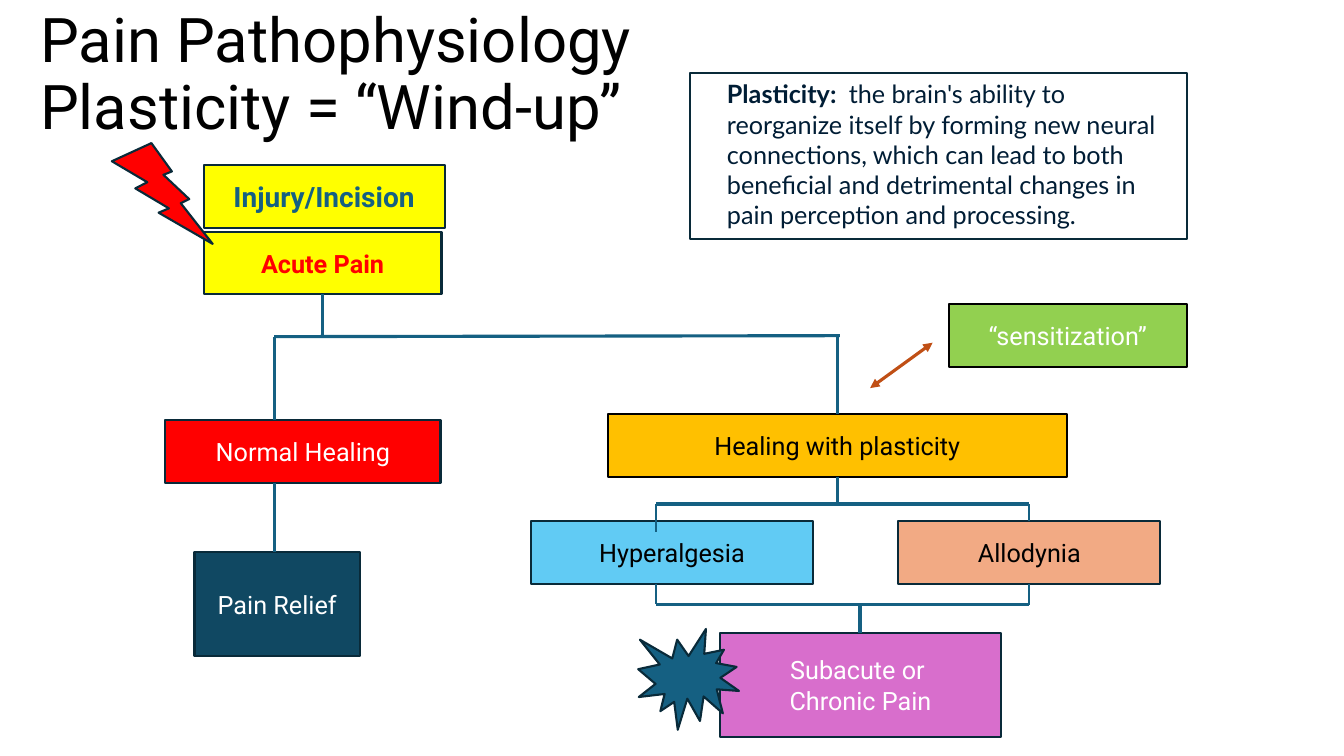
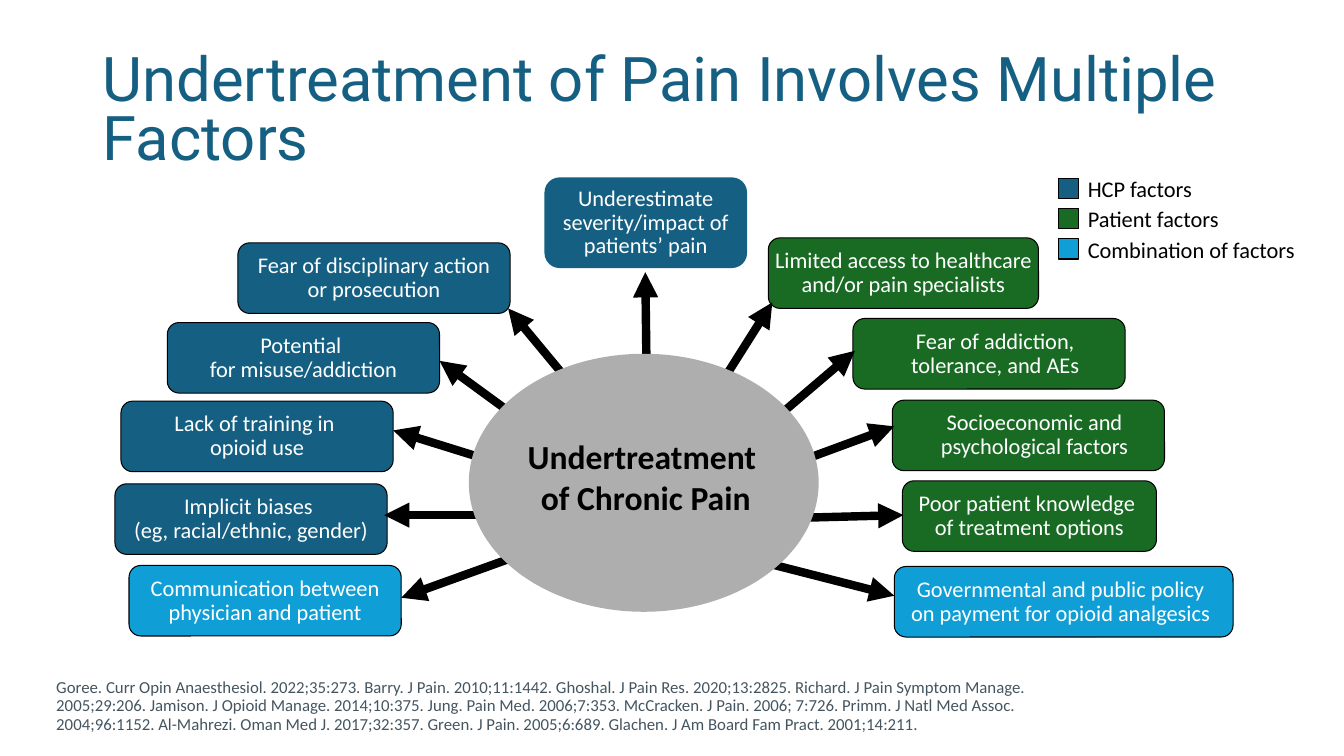
from lxml.etree import SubElement
from pptx import Presentation
from pptx.dml.color import RGBColor
from pptx.enum.shapes import MSO_CONNECTOR, MSO_SHAPE
from pptx.enum.text import MSO_ANCHOR, PP_ALIGN
from pptx.oxml.ns import qn
from pptx.util import Emu, Pt

SCALE = 9144
INKS = {
    "black": "000000", "white": "FFFFFF", "ink": "092A39", "teal": "156082",
    "deep": "104862", "yellow": "FFFF00", "red": "FF0000", "gold": "FFC000",
    "sky": "61CBF4", "peach": "F2AA84", "pink": "D86ECC", "lime": "92D050",
    "rust": "C04F15", "navy": "001D35", "green": "196B24", "blue": "0F9ED5",
    "grey": "AEAEAE", "slate": "455560",
}
FONTS = {
    "title": {"name": "Roboto", "size": Pt(44)},
    "node": {"name": "Roboto", "size": Pt(18)},
    "bold": {"name": "Roboto", "size": Pt(18), "bold": True},
    "lead": {"name": "Roboto", "size": Pt(20), "bold": True},
    "term": {"name": "Lato", "size": Pt(18), "bold": True},
    "note": {"name": "Lato", "size": Pt(18)},
    "label": {"name": "Calibri", "size": Pt(16)},
    "hub": {"name": "Calibri", "size": Pt(24), "bold": True},
    "source": {"name": "Calibri", "size": Pt(12)},
}
MIDDLE = {"vertical_anchor": MSO_ANCHOR.MIDDLE}
CENTER = {"alignment": PP_ALIGN.CENTER}
TIGHT = {"alignment": PP_ALIGN.CENTER, "line_spacing": Pt(17)}

REFS = (
    "Goree. Curr Opin Anaesthesiol. 2022;35:273. Barry. J Pain. 2010;11:1442. "
    "Ghoshal. J Pain Res. 2020;13:2825. Richard. J Pain Symptom Manage. "
    "2005;29:206. Jamison. J Opioid Manage. 2014;10:375. Jung. Pain Med. "
    "2006;7:353. McCracken. J Pain. 2006; 7:726. Primm. J Natl Med Assoc. "
    "2004;96:1152. Al-Mahrezi. Oman Med J. 2017;32:357. Green. J Pain. "
    "2005;6:689. Glachen. J Am Board Fam Pract. 2001;14:211."
)


def px(*sizes):
    return [Emu(size * SCALE) for size in sizes]


def tint(name):
    return RGBColor.from_string(INKS[name])


def apply(target, form):
    for key, value in form.items():
        setattr(target, key, value)


def add_run(para, text, font, ink):
    run = para.add_run()
    run.text = text
    apply(run.font, FONTS[font])
    run.font.color.rgb = tint(ink)


def write(shape, text, font, ink, form, frame=MIDDLE):
    body = shape.text_frame
    apply(body, {"word_wrap": True, **frame})
    for index, line in enumerate(text.split("\n")):
        para = body.add_paragraph() if index else body.paragraphs[0]
        apply(para, form)
        add_run(para, line, font, ink)


def add_text(slide, area, text, font, ink, form, frame):
    write(slide.shapes.add_textbox(*px(*area)), text, font, ink, form, frame)


def add_title(slide, left, top, text, ink, space):
    add_text(slide, (left, top, 1150, 145), text, "title", ink,
             {"line_spacing": space}, MIDDLE)


def add_form(slide, kind, area, fill=None, edge=None, width=1.5):
    shape = slide.shapes.add_shape(kind, *px(*area))
    shape.shadow.inherit = False
    if fill:
        shape.fill.solid()
        shape.fill.fore_color.rgb = tint(fill)
    else:
        shape.fill.background()
    if edge:
        shape.line.color.rgb = tint(edge)
        shape.line.width = Pt(width)
    else:
        shape.line.fill.background()
    return shape


def add_node(slide, area, text, fill, ink, edge="ink", font="node"):
    shape = add_form(slide, MSO_SHAPE.RECTANGLE, area, fill, edge)
    write(shape, text, font, ink, CENTER)


def add_card(slide, area, text, fill, edge="black", pads=(10, 10)):
    shape = add_form(slide, MSO_SHAPE.ROUNDED_RECTANGLE, area, fill, edge, 0.75)
    left, right = px(*pads)
    write(shape, text, "label", "white", TIGHT,
          {**MIDDLE, "margin_left": left, "margin_right": right})


def add_line(slide, ends, ink, width, tips=()):
    line = slide.shapes.add_connector(MSO_CONNECTOR.STRAIGHT, *px(*ends))
    line.line.color.rgb = tint(ink)
    line.line.width = Pt(width)
    props = line._element.spPr
    SubElement(props, qn("a:effectLst"))
    for tip in tips:
        SubElement(props.find(qn("a:ln")), qn(tip)).set("type", "triangle")


def draw_path(slide):
    add_title(slide, 30, 3, "Pain Pathophysiology\nPlasticity = “Wind-up”",
              "black", 0.9)
    for node in (
        ((202, 164, 239, 62), "Injury/Incision", "yellow", "teal", "ink", "lead"),
        ((202, 230, 236, 62), "Acute Pain", "yellow", "red", "ink", "bold"),
        ((164, 417, 273, 62), "Normal Healing", "red", "white"),
        ((193, 548, 164, 103), "Pain Relief", "deep", "white"),
        ((603, 411, 455, 62), "Healing with plasticity", "gold", "black", "black"),
        ((527, 517, 279, 62), "Hyperalgesia", "sky", "black"),
        ((891, 517, 260, 62), "Allodynia", "peach", "black"),
        ((714, 628, 279, 103), "Subacute or \nChronic Pain", "pink", "white"),
        ((941, 302, 236, 62), "“sensitization”", "lime", "white", "black"),
    ):
        add_node(slide, *node)
    add_form(slide, MSO_SHAPE.LIGHTNING_BOLT, (111, 142, 100, 100), "red", "ink")

    heal, plastic, hyper, allo = 272, 831, 651, 1021
    for ends in (
        (320, 292, 320, 333), (heal, 334, 833, 333), (heal, 334, heal, 417),
        (plastic, 334, plastic, 411), (plastic, 473, plastic, 501),
        (hyper, 500, allo, 500), (heal, 479, heal, 548),
        (hyper, 600, allo, 600), (853, 600, 853, 628),
    ):
        add_line(slide, ends, "teal", 2.25)
    for ends in (
        (allo, 500, allo, 517), (hyper, 500, hyper, 528),
        (hyper, 579, hyper, 599), (allo, 579, allo, 600),
    ):
        add_line(slide, ends, "teal", 1.5)
    add_line(slide, (925, 340, 863, 385), "rust", 2.25,
             ("a:headEnd", "a:tailEnd"))
    add_form(slide, MSO_SHAPE.EXPLOSION1, (633, 624, 100, 100), "teal", "ink")

    note = add_form(slide, MSO_SHAPE.RECTANGLE, (684, 72, 493, 165), None, "ink")
    left, top = px(37, 6)
    write(note, "Plasticity:  ", "term", "navy", {"alignment": PP_ALIGN.LEFT},
          {"vertical_anchor": MSO_ANCHOR.TOP, "margin_left": left,
           "margin_top": top})
    add_run(note.text_frame.paragraphs[0],
            "the brain's ability to reorganize itself by forming new neural "
            "connections, which can lead to both beneficial and detrimental "
            "changes in pain perception and processing.", "note", "navy")


def draw_key(slide):
    keys = (("teal", "HCP factors"), ("green", "Patient factors"),
            ("blue", "Combination of factors"))
    for index, (fill, text) in enumerate(keys):
        top = 177 + 30 * index
        add_form(slide, MSO_SHAPE.RECTANGLE, (1050, top, 20, 20), fill,
                 "black", 0.75)
        add_text(slide, (1069, top - 8, 249, 37), text, "label", "black", {}, {})


def draw_web(slide):
    add_title(slide, 92, 40, "Undertreatment of Pain Involves Multiple Factors",
              "teal", 0.8)
    draw_key(slide)
    for card in (
        ((540, 176, 201, 90), "Underestimate severity/impact of patients’ pain",
         "teal", None),
        ((236, 241, 270, 70), "Fear of disciplinary action or prosecution", "teal"),
        ((166, 320, 270, 70), "Potential \nfor misuse/addiction", "teal"),
        ((120, 398, 270, 70), "Lack of training in \nopioid use", "teal"),
        ((114, 480, 270, 70), "Implicit biases \n(eg, racial/ethnic, gender)",
         "teal"),
        ((128, 561, 270, 70), "Communication between physician and patient",
         "blue"),
        ((762, 236, 268, 70), "Limited access to healthcare and/or pain specialists",
         "green", "black", (0, 0)),
        ((846, 316, 270, 70), "Fear of addiction, tolerance, and AEs",
         "green", "black", (22, 10)),
        ((885, 397, 270, 70), "Socioeconomic and psychological factors",
         "green", "black", (22, 10)),
        ((895, 477, 252, 70), "Poor patient knowledge \nof treatment options",
         "green"),
        ((887, 562, 336, 70),
         "Governmental and public policy on payment for opioid analgesics",
         "blue", "black", (12, 18)),
    ):
        add_card(slide, *card)
    for ends in (
        (640, 270, 642, 425), (504, 306, 606, 429), (436, 358, 566, 453),
        (390, 427, 538, 473), (381, 511, 518, 511), (398, 593, 509, 553),
        (887, 591, 754, 557), (896, 511, 743, 515), (887, 423, 738, 478),
        (848, 348, 712, 464), (766, 300, 682, 433),
    ):
        add_line(slide, ends, "black", 6, ("a:headEnd",))
    add_form(slide, MSO_SHAPE.OVAL, (465, 351, 347, 256), "grey")
    add_text(slide, (506, 428, 269, 91), "Undertreatment \nof Chronic Pain",
             "hub", "black", CENTER, {})
    add_text(slide, (46, 669, 983, 65), REFS, "source", "slate",
             {"line_spacing": 0.9}, {})


def main():
    deck = Presentation()
    deck.slide_width, deck.slide_height = px(1333, 750)
    for draw in (draw_path, draw_web):
        draw(deck.slides.add_slide(deck.slide_layouts[6]))
    deck.save("out.pptx")


if __name__ == "__main__":
    main()
